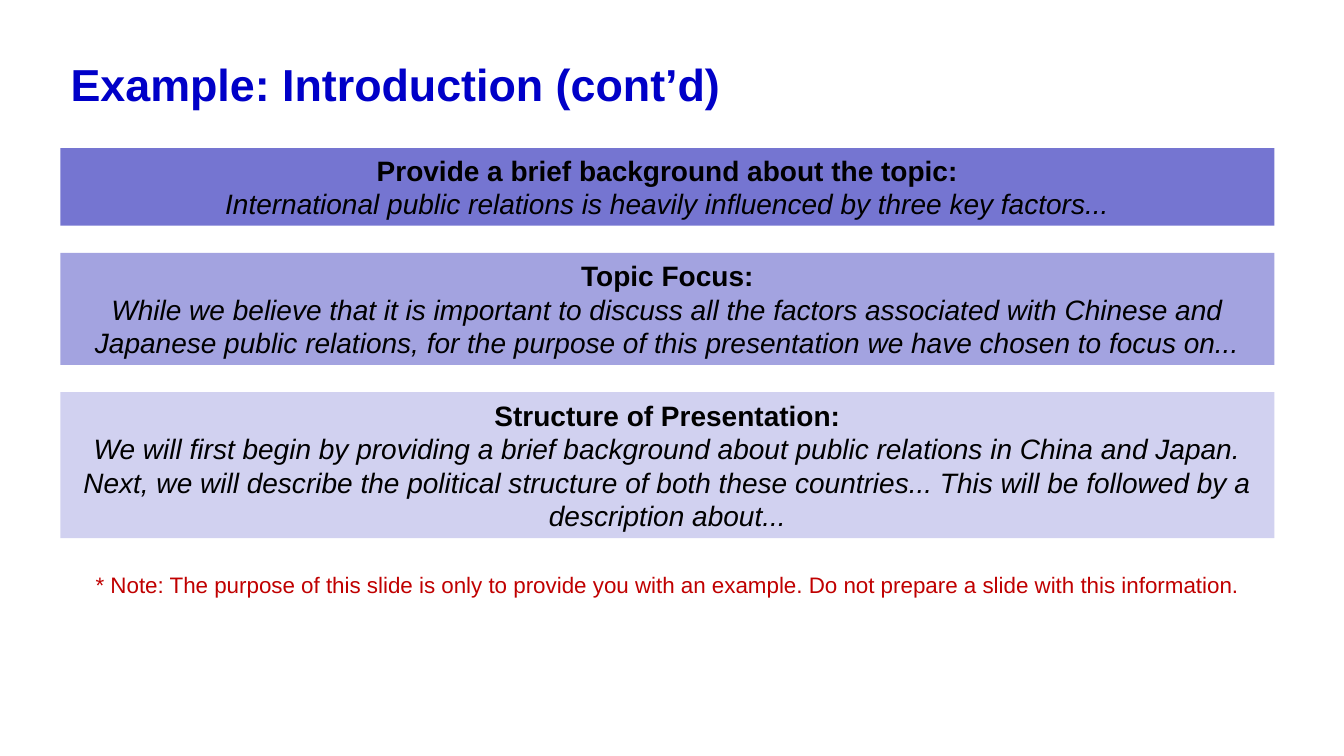
from pptx import Presentation
from pptx.dml.color import RGBColor
from pptx.enum.shapes import MSO_SHAPE as Shape
from pptx.enum.text import MSO_ANCHOR as Anchor, PP_ALIGN as Align
from pptx.util import Pt

PX = 9144
LEFT, WIDTH, GAP = 60, 1204, 27
COLORS = {
    "title": "0000C8",
    "text": "000000",
    "note": "C00000",
    "background": "7575D1",
    "focus": "A3A3E0",
    "structure": "D1D1F0",
}
SECTIONS = [
    ("background", 77, "Provide a brief background about the topic:",
     "International public relations is heavily influenced by three key factors..."),
    ("focus", 111, "Topic Focus:",
     "While we believe that it is important to discuss all the factors associated with "
     "Chinese and Japanese public relations, for the purpose of this presentation we "
     "have chosen to focus on..."),
    ("structure", 145, "Structure of Presentation:",
     "We will first begin by providing a brief background about public relations in "
     "China and Japan. Next, we will describe the political structure of both these "
     "countries... This will be followed by a description about..."),
]
NOTE = ("* Note: The purpose of this slide is only to provide you with an example. "
        "Do not prepare a slide with this information.")


def place(top, height):
    return [length * PX for length in (LEFT, top, WIDTH, height)]


def write(shape, lines, color, align):
    frame = shape.text_frame
    frame.word_wrap = True
    frame.vertical_anchor = Anchor.MIDDLE
    frame.text = "\n".join(text for text, _ in lines)
    for paragraph, (_, formats) in zip(frame.paragraphs, lines):
        paragraph.alignment = align
        paragraph.font.color.rgb = RGBColor.from_string(COLORS[color])
        for name, value in {"name": "Arial", **formats}.items():
            setattr(paragraph.font, name, value)


presentation = Presentation()
presentation.slide_width = 1333 * PX
presentation.slide_height = 750 * PX
slide = presentation.slides.add_slide(presentation.slide_layouts[5])

title = slide.shapes.title
title.left, title.top, title.width, title.height = place(47, 71)
write(title, [("Example: Introduction (cont’d)", {"size": Pt(32), "bold": True})],
      "title", Align.LEFT)

top = 147
for color, height, heading, example in SECTIONS:
    band = slide.shapes.add_shape(Shape.RECTANGLE, *place(top, height))
    band.shadow.inherit = False
    band.fill.solid()
    band.fill.fore_color.rgb = RGBColor.from_string(COLORS[color])
    band.line.fill.background()
    write(band, [(heading, {"size": Pt(20), "bold": True}),
                 (example, {"size": Pt(20), "italic": True})], "text", Align.CENTER)
    top += height + GAP

note = slide.shapes.add_textbox(*place(top, 37))
write(note, [(NOTE, {"size": Pt(16)})], "note", Align.CENTER)

presentation.save("out.pptx")
